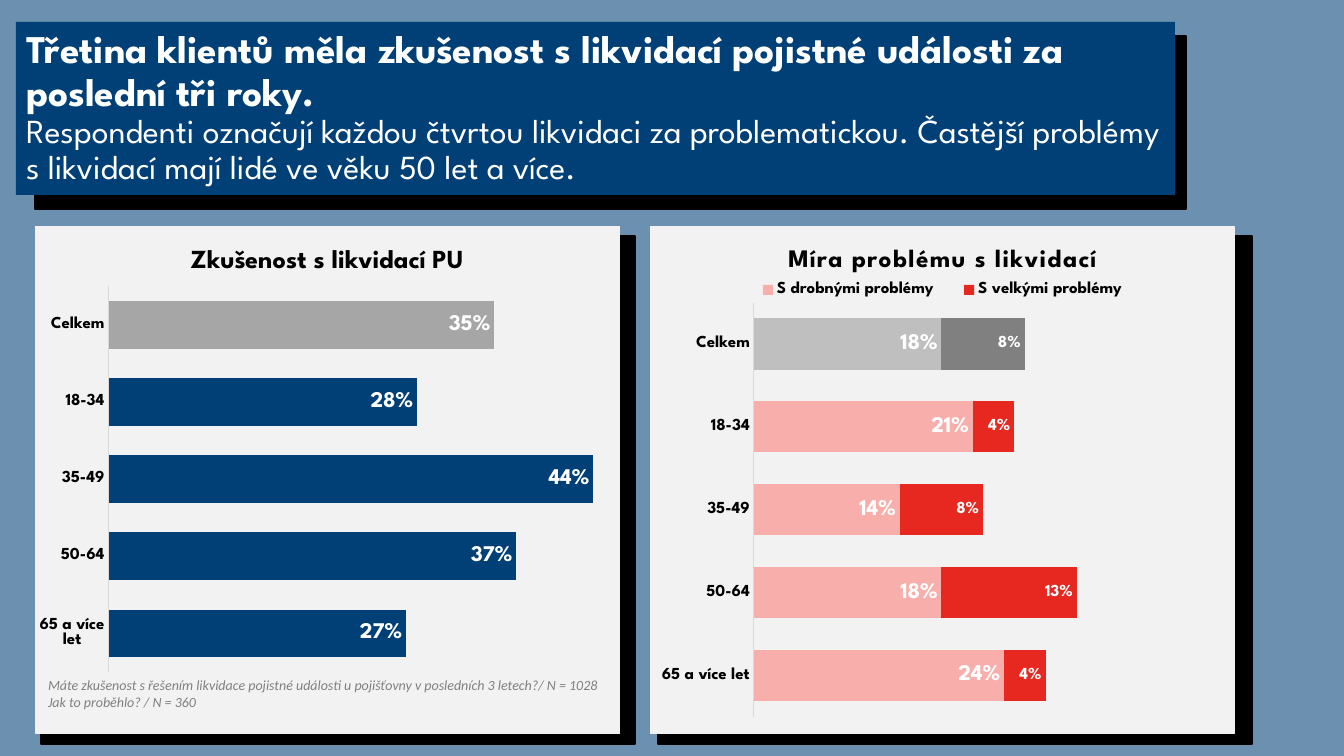
"""Build the slide on experience with insurance claim handling."""
import pptx
import pptx.chart.data
import pptx.dml.color
import pptx.enum.chart
import pptx.enum.shapes
import pptx.enum.text
import pptx.oxml
import pptx.oxml.ns
import pptx.util

HEX = dict(sky="6B90B0", navy="004077", black="000000", white="FFFFFF",
           panel="F2F2F2", axis="D9D9D9", note="808080", gray="A6A6A6",
           silver="BFBFBF", dark="808080", pink="F8AEAA", red="E72821")
FACE = "League Spartan"
PX = 914400 / 100.8
SIZE = (1344, 756)
HEAD = (16, 22, 1159, 173)
SHADES = [(41, 236, 594, 508), (658, 236, 594, 508), (35, 36, 1151, 173)]
CLAIM = [
    ("Třetina klientů měla zkušenost s likvidací pojistné události za poslední tři roky.", 28, True),
    ("Respondenti označují každou čtvrtou likvidaci za problematickou. "
     "Častější problémy s likvidací mají lidé ve věku 50 let a více.", 24, False),
]
NOTE = [
    "Máte zkušenost s řešením likvidace pojistné události u pojišťovny v posledních 3 letech?/ N = 1028",
    "Jak to proběhlo? / N = 360",
]
NOTE_BOX = (35, 672, 585, 62)
AGES = ["65 a více let", "50-64", "35-49", "18-34", "Celkem"]
TOTAL = AGES.index("Celkem")
CHARTS = [
    dict(title="Zkušenost s likvidací PU", size=18.6, track=0,
         box=(35, 226, 585, 508), plot=(0.125, 0.118, 0.849, 0.761),
         kind="BAR_CLUSTERED", legend=None,
         series=[("Zkušenost s likvidací PU", (0.27, 0.37, 0.44, 0.28, 0.35), "navy", "gray", 16)]),
    dict(title="Míra problému s likvidací", size=18, track=100,
         box=(650, 226, 585, 508), plot=(0.177, 0.15, 0.803, 0.818),
         kind="BAR_STACKED", legend=(0.15, 0.1, 0.7, 0.05),
         series=[("S drobnými problémy", (0.24, 0.18, 0.14, 0.21, 0.18), "pink", "silver", 16),
                 ("S velkými problémy", (0.04, 0.13, 0.08, 0.04, 0.08), "red", "dark", 12)]),
]


def emu(box):
    return [round(n * PX) for n in box]


def rgb(name):
    return pptx.dml.color.RGBColor.from_string(HEX[name])


def assign(obj, vals):
    for key, val in vals.items():
        setattr(obj, key, val)


def style(font, size, color="black", bold=True, face=FACE, italic=False):
    assign(font, dict(size=pptx.util.Pt(size), bold=bold, name=face, italic=italic))
    font.color.rgb = rgb(color)


def paint(fill, color):
    fill.solid()
    fill.fore_color.rgb = rgb(color)


def arrange(node, index, box, inner=False):
    for old in node.findall(pptx.oxml.ns.qn("c:layout")):
        node.remove(old)
    target = '<c:layoutTarget val="inner"/>' if inner else ""
    modes = "".join(f'<c:{k}Mode val="edge"/>' for k in "xy")
    vals = "".join(f'<c:{k} val="{v}"/>' for k, v in zip("xywh", box))
    node.insert(index, pptx.oxml.parse_xml(
        f'<c:layout {pptx.oxml.ns.nsdecls("c")}><c:manualLayout>'
        f'{target}{modes}{vals}</c:manualLayout></c:layout>'))


def add_bars(slide, item):
    enum = pptx.enum.chart
    data = pptx.chart.data.CategoryChartData(number_format="0%")
    data.categories = AGES
    for name, vals, *_ in item["series"]:
        data.add_series(name, vals)
    kind = getattr(enum.XL_CHART_TYPE, item["kind"])
    chart = slide.shapes.add_chart(kind, *emu(item["box"]), data).chart
    style(chart.font, 10)

    chart.has_title = True
    run = chart.chart_title.text_frame.paragraphs[0].add_run()
    run.text = item["title"]
    style(run.font, item["size"])
    run._r.get_or_add_rPr().set("spc", str(item["track"]))

    cat, val = chart.category_axis, chart.value_axis
    none = enum.XL_TICK_MARK.NONE
    assign(cat, dict(major_tick_mark=none, minor_tick_mark=none, has_major_gridlines=False))
    style(cat.tick_labels.font, 12)
    cat.format.line.color.rgb = rgb("axis")
    cat.format.line.width = pptx.util.Pt(0.75)
    assign(val, dict(visible=False, minimum_scale=0, maximum_scale=0.45, has_major_gridlines=False))

    plot = chart.plots[0]
    assign(plot, dict(gap_width=62, vary_by_categories=False))
    if item["kind"] == "BAR_STACKED":
        plot.overlap = 100
    for bars, (_, _, color, total, size) in zip(plot.series, item["series"]):
        paint(bars.format.fill, color)
        paint(bars.points[TOTAL].format.fill, total)
        labels = bars.data_labels
        assign(labels, dict(show_value=True, number_format="0%", number_format_is_linked=False,
                            position=enum.XL_LABEL_POSITION.INSIDE_END))
        style(labels.font, size, "white")

    root = chart._chartSpace
    chart.has_legend = bool(item["legend"])
    if item["legend"]:
        assign(chart.legend, dict(position=enum.XL_LEGEND_POSITION.TOP, include_in_layout=False))
        style(chart.legend.font, 12)
        arrange(root.find(".//" + pptx.oxml.ns.qn("c:legend")), 1, item["legend"])
    arrange(root.find(".//" + pptx.oxml.ns.qn("c:plotArea")), 0, item["plot"], True)
    solid = f'<a:solidFill><a:srgbClr val="{HEX["panel"]}"/></a:solidFill>'
    root.find(pptx.oxml.ns.qn("c:chart")).addnext(pptx.oxml.parse_xml(
        f'<c:spPr {pptx.oxml.ns.nsdecls("c", "a")}>{solid}<a:ln w="9525">{solid}</a:ln></c:spPr>'))


def add_claim(title):
    assign(title, dict(zip(("left", "top", "width", "height"), emu(HEAD))))
    paint(title.fill, "navy")
    text = pptx.enum.text
    assign(title.text_frame, dict(word_wrap=True, auto_size=text.MSO_AUTO_SIZE.NONE,
                                  vertical_anchor=text.MSO_ANCHOR.MIDDLE))
    para = title.text_frame.paragraphs[0]
    assign(para, dict(alignment=text.PP_ALIGN.LEFT, line_spacing=0.9))
    for i, (words, size, bold) in enumerate(CLAIM):
        if i:
            para.add_line_break()
        run = para.add_run()
        run.text = words
        style(run.font, size, "white", bold)


def add_note(slide):
    frame = slide.shapes.add_textbox(*emu(NOTE_BOX)).text_frame
    assign(frame, dict(word_wrap=True, margin_left=round(13 * PX)))
    for i, line in enumerate(NOTE):
        para = frame.add_paragraph() if i else frame.paragraphs[0]
        run = para.add_run()
        run.text = line
        style(run.font, 10, "note", False, "Calibri", True)


def main():
    deck = pptx.Presentation()
    deck.slide_width, deck.slide_height = emu(SIZE)
    slide = deck.slides.add_slide(deck.slide_layouts[5])
    paint(slide.background.fill, "sky")
    title = slide.shapes.title
    for box in SHADES:
        shade = slide.shapes.add_shape(pptx.enum.shapes.MSO_SHAPE.RECTANGLE, *emu(box))
        shade.shadow.inherit = False
        paint(shade.fill, "black")
        shade.line.color.rgb = rgb("black")
        shade.line.width = pptx.util.Pt(1)
    shade._element.addnext(title._element)
    add_claim(title)
    for item in CHARTS:
        add_bars(slide, item)
    add_note(slide)
    deck.save("out.pptx")


if __name__ == "__main__":
    main()
